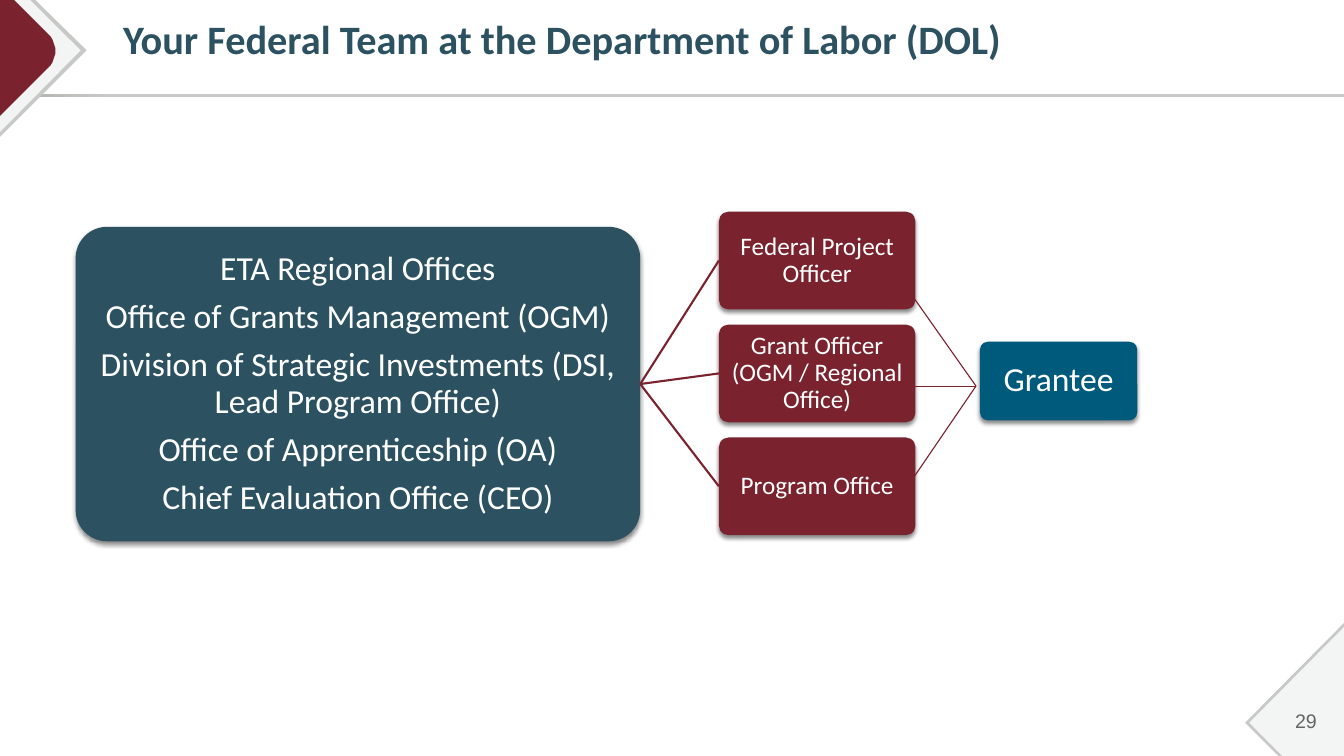
import pptx
import pptx.dml.color
import pptx.enum.shapes
import pptx.enum.text
import pptx.oxml
import pptx.oxml.ns
import pptx.util

SCALE = 9144
COLORS = {
    "teal": "2C5261",
    "maroon": "7A232F",
    "blue": "005A7C",
    "rule": "C8C8C6",
    "rule_dark": "ABABA8",
    "pale": "F3F4F4",
    "number": "646464",
    "white": "FFFFFF",
}
SHADOW = (
    '<a:effectLst %s><a:outerShdw blurRad="38100" dist="25400" dir="5400000" rotWithShape="0">'
    '<a:srgbClr val="000000"><a:alpha val="45000"/></a:srgbClr></a:outerShdw></a:effectLst>'
    % pptx.oxml.ns.nsdecls("a")
)
NO_EFFECT = "<a:effectLst %s/>" % pptx.oxml.ns.nsdecls("a")
TEAM = [
    "ETA Regional Offices",
    "Office of Grants Management (OGM)",
    "Division of Strategic Investments (DSI, Lead Program Office)",
    "Office of Apprenticeship (OA)",
    "Chief Evaluation Office (CEO)",
]
OFFICERS = ["Federal Project Officer", "Grant Officer (OGM / Regional Office)", "Program Office"]


def px(*lengths):
    return [pptx.util.Emu(length * SCALE) for length in lengths]


def rgb(name):
    return pptx.dml.color.RGBColor.from_string(COLORS[name])


def write_text(shape, lines, size, color="white", font="Calibri", bold=False, align="CENTER",
               anchor="MIDDLE", insets=(1, 1, 1, 1), line_spacing=0.9):
    frame = shape.text_frame
    frame.word_wrap = True
    frame.vertical_anchor = getattr(pptx.enum.text.MSO_ANCHOR, anchor)
    frame.margin_left, frame.margin_top, frame.margin_right, frame.margin_bottom = px(*insets)
    for index, line in enumerate(lines):
        paragraph = frame.add_paragraph() if index else frame.paragraphs[0]
        paragraph.text = line
        paragraph.alignment = getattr(pptx.enum.text.PP_ALIGN, align)
        paragraph.line_spacing = line_spacing
        if index < len(lines) - 1:
            paragraph.space_after = pptx.util.Pt(size * 0.35)
        paragraph.font.size = pptx.util.Pt(size)
        paragraph.font.name = font
        paragraph.font.bold = bold
        paragraph.font.color.rgb = rgb(color)


def add_card(slide, box, color, lines, size, inset=1):
    card = slide.shapes.add_shape(pptx.enum.shapes.MSO_SHAPE.ROUNDED_RECTANGLE, *px(*box))
    card.adjustments[0] = 0.1
    card.fill.solid()
    card.fill.fore_color.rgb = rgb(color)
    card.line.fill.background()
    card.element.spPr.append(pptx.oxml.parse_xml(SHADOW))
    write_text(card, lines, size, insets=[inset] * 4)
    return card


def add_line(slide, start, end, width):
    line = slide.shapes.add_connector(pptx.enum.shapes.MSO_CONNECTOR.STRAIGHT, *px(*start, *end))
    line.line.color.rgb = rgb("maroon")
    line.line.width = pptx.util.Pt(width)
    line.element.spPr.append(pptx.oxml.parse_xml(NO_EFFECT))
    return line


def add_outline(slide, points, color):
    builder = slide.shapes.build_freeform(*points[0], scale=SCALE)
    builder.add_line_segments(points[1:], close=True)
    outline = builder.convert_to_shape()
    outline.shadow.inherit = False
    outline.fill.solid()
    outline.fill.fore_color.rgb = rgb(color)
    outline.line.fill.background()


def curve(start, control_a, control_b, end, steps=12):
    return [
        tuple(
            (1 - t) ** 3 * a + 3 * (1 - t) ** 2 * t * b + 3 * (1 - t) * t * t * c + t ** 3 * d
            for a, b, c, d in zip(start, control_a, control_b, end)
        )
        for t in (step / steps for step in range(steps + 1))
    ]


def add_rule(slide):
    rule = slide.shapes.add_shape(pptx.enum.shapes.MSO_SHAPE.RECTANGLE, *px(0, 93, 1333, 3))
    rule.shadow.inherit = False
    rule.line.fill.background()
    rule.fill.gradient()
    rule.fill.gradient_angle = 0
    for stop, position, color in zip(rule.fill.gradient_stops, (0, 0.08), ("rule_dark", "rule")):
        stop.position = position
        stop.color.rgb = rgb(color)


def add_decoration(slide):
    add_outline(slide, [(1333, 618), (1333, 750), (1268, 750), (1235, 717)], "rule")
    add_outline(slide, [(1333, 622), (1333, 750), (1272, 750), (1239, 717)], "pale")
    add_rule(slide)
    add_outline(slide, [(0, 0), (35, 0), (86, 50), (0, 136)], "rule")
    add_outline(slide, [(0, 0), (30, 0), (80, 50), (0, 131)], "pale")
    corner = curve((48, 34), (57, 43), (57, 58), (48, 67))
    add_outline(slide, [(0, 0), (14, 0), *corner, (0, 115)], "maroon")


def add_diagram(slide):
    team = add_card(slide, (75, 225, 560, 312), "teal", TEAM, 24, inset=2)
    for index, officer in enumerate(OFFICERS):
        top = 210 + 112 * index
        card = add_card(slide, (713, top, 195, 97), "maroon", [officer], 18)
        line = add_line(slide, (635, 381), (713, top + 48), 1.5)
        line.begin_connect(team, 3)
        line.end_connect(card, 1)
    for start_y in (295, 383, 474):
        add_line(slide, (906, start_y), (968, 383), 0.79)
    add_card(slide, (972, 339, 156, 78), "blue", ["Grantee"], 24)


def main():
    presentation = pptx.Presentation()
    presentation.slide_width, presentation.slide_height = px(1333, 750)
    slide = presentation.slides.add_slide(presentation.slide_layouts[6])
    add_decoration(slide)
    title = slide.shapes.add_textbox(*px(102, 15, 1091, 78))
    write_text(title, ["Your Federal Team at the Department of Labor (DOL)"], 28.8, "teal",
               bold=True, align="LEFT", anchor="TOP", insets=(20, 5, 10, 5))
    number = slide.shapes.add_textbox(*px(1245, 695, 71, 40))
    write_text(number, ["29"], 14, "number", font="Arial", align="RIGHT",
               insets=(10, 5, 10, 5), line_spacing=1.0)
    add_diagram(slide)
    presentation.save("out.pptx")


if __name__ == "__main__":
    main()
